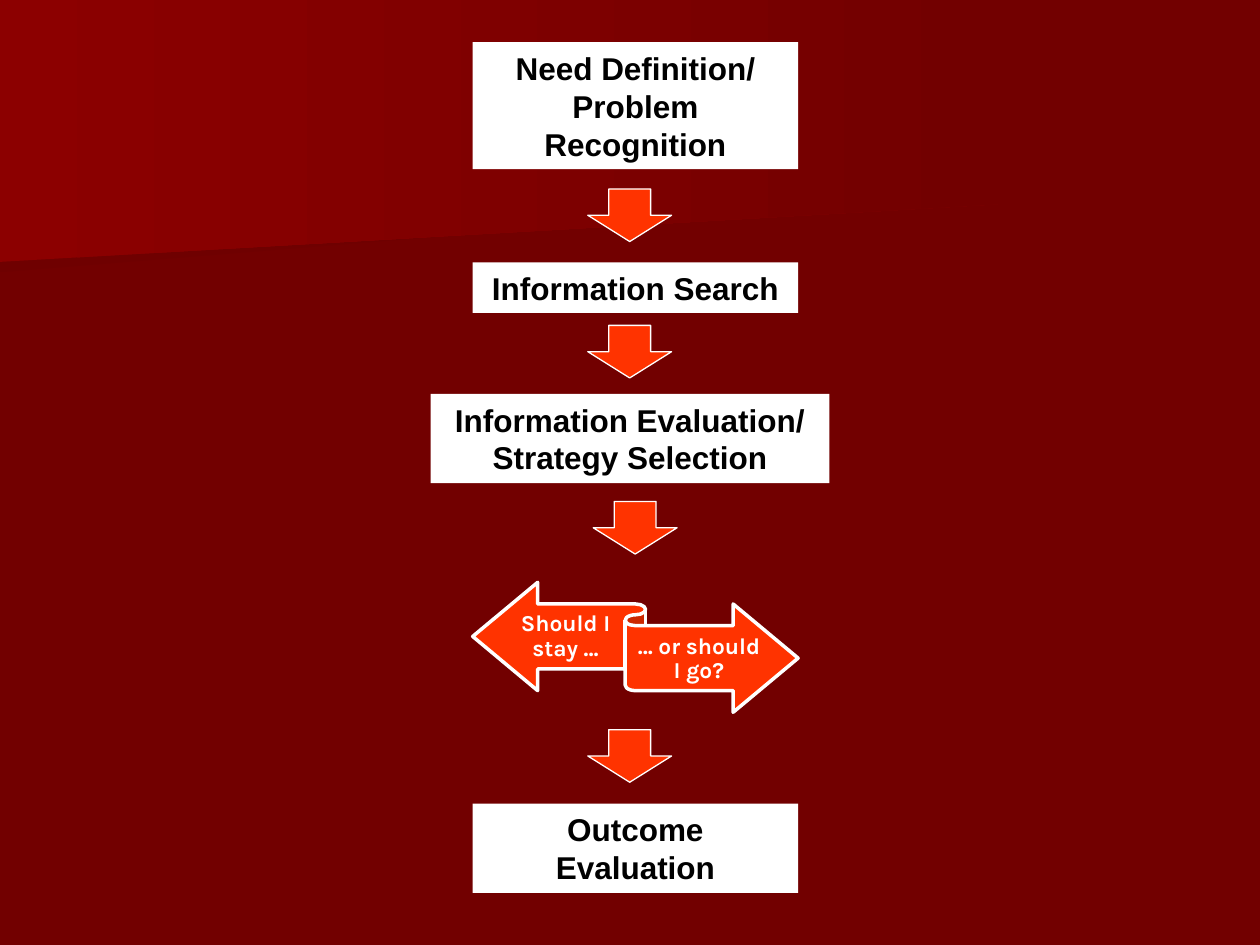
from pptx import Presentation
from pptx.dml.color import RGBColor
from pptx.enum import shapes, text
from pptx.util import Cm, Pt

COLORS = {
    "background": "720000",
    "shade": "6F0000",
    "glow": "8C0000",
    "box": "FFFFFF",
    "box_text": "000000",
    "arrow": "FF3300",
    "arrow_text": "FFFFFF",
    "outline": "FFFFFF",
}
STEPS = [
    (["Need Definition/", "Problem Recognition"], (9.53, 0.85, 6.56, 2.56)),
    (["Information Search"], (9.53, 5.29, 6.56, 1.02)),
    (["Information Evaluation/", "Strategy Selection"], (8.68, 7.94, 8.04, 1.8)),
    (["Outcome Evaluation"], (9.53, 16.2, 6.56, 1.8)),
]
ARROWS = [(11.85, 3.81), (11.85, 6.56), (11.85, 14.71), (11.96, 10.11)]


def color(name):
    return RGBColor.from_string(COLORS[name])


def write(s, lines, font, size, name):
    tf = s.text_frame
    tf.word_wrap = True
    tf.vertical_anchor = text.MSO_ANCHOR.MIDDLE
    tf.text = "\n".join(lines)
    for p in tf.paragraphs:
        p.alignment = text.PP_ALIGN.CENTER
        for r in p.runs:
            r.font.name = font
            r.font.size = Pt(size)
            r.font.bold = True
            r.font.color.rgb = color(name)
    return tf


def add_solid(sp, kind, box, fill, line_width=None):
    s = sp.add_shape(kind, *map(Cm, box))
    s.shadow.inherit = False
    s.fill.solid()
    s.fill.fore_color.rgb = color(fill)
    if line_width:
        s.line.color.rgb = color("outline")
        s.line.width = Pt(line_width)
    else:
        s.line.fill.background()
    return s


def add_band(sp, box, points, start):
    left, top, width, height = box
    corners = [(Cm(left + x * width), Cm(top + y * height)) for x, y in points]
    builder = sp.build_freeform(*corners[0])
    builder.add_line_segments(corners[1:], close=True)
    s = builder.convert_to_shape()
    s.shadow.inherit = False
    s.line.fill.background()
    s.fill.gradient()
    s.fill.gradient_angle = 0
    for stop, position, name in zip(s.fill.gradient_stops, (0, 1), (start, "background")):
        stop.position = position
        stop.color.rgb = color(name)


def add_step(sp, box, lines):
    s = add_solid(sp, shapes.MSO_SHAPE.RECTANGLE, box, "box")
    write(s, lines, "Arial", 18, "box_text")


def add_choice(sp, box):
    left, top, width, height = box
    add_solid(sp, shapes.MSO_SHAPE.LEFT_RIGHT_RIBBON, box, "arrow", 2)
    labels = [
        ("Should I stay …", 0.12, 0.17, 0.33),
        ("… or should I go?", 0.5, 0.34, 0.39),
    ]
    for label, x, y, w in labels:
        s = sp.add_textbox(Cm(left + x * width), Cm(top + y * height),
                           Cm(w * width), Cm(height / 2))
        tf = write(s, [label], "Karla", 13, "arrow_text")
        tf.margin_left = tf.margin_right = 0
        tf.paragraphs[0].line_spacing = 0.9


def main():
    prs = Presentation()
    prs.slide_width, prs.slide_height = Cm(25.4), Cm(19.05)
    slide = prs.slides.add_slide(prs.slide_layouts[6])
    slide.background.fill.solid()
    slide.background.fill.fore_color.rgb = color("background")
    sp = slide.shapes

    add_band(sp, (0, 2.57, 19.79, 2.92),
             [(1, 0.45), (0, 1), (0, 0), (1, 0), (1, 0.23)], "shade")
    add_band(sp, (0, 0, 20.12, 5.28),
             [(1, 0.78), (0, 1), (0, 0), (1, 0)], "glow")
    for lines, box in STEPS:
        add_step(sp, box, lines)
    for left, top in ARROWS:
        add_solid(sp, shapes.MSO_SHAPE.DOWN_ARROW, (left, top, 1.69, 1.06), "arrow", 0.75)
    add_choice(sp, (9.53, 11.74, 6.56, 2.62))

    prs.save("out.pptx")


if __name__ == "__main__":
    main()
